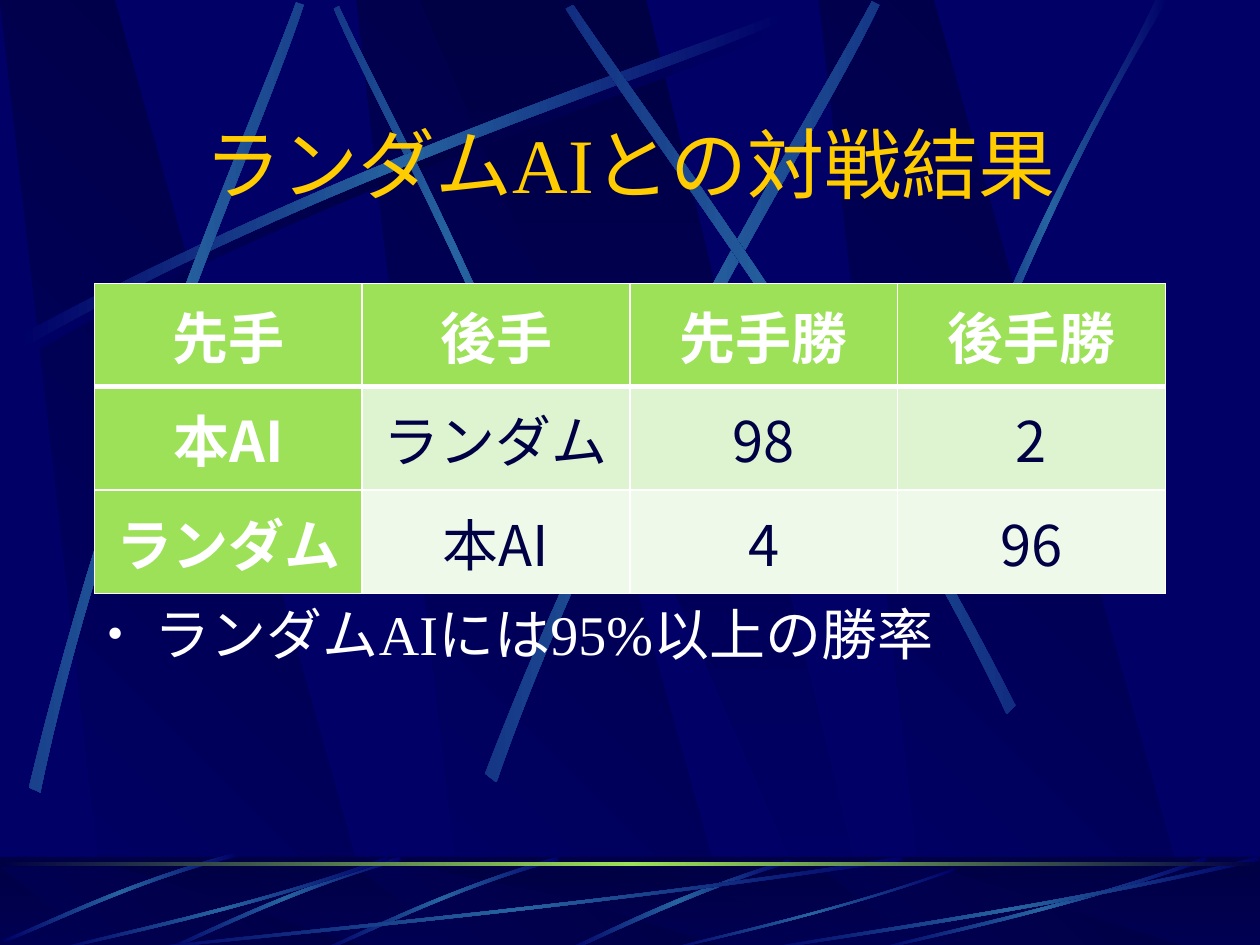
from dataclasses import dataclass
from math import cos, radians, sin

from lxml import etree
from pptx import Presentation
from pptx.dml.color import RGBColor
from pptx.enum.shapes import MSO_SHAPE
from pptx.enum.text import MSO_ANCHOR, PP_ALIGN
from pptx.oxml.ns import qn
from pptx.util import Emu, Pt

EMU_PER_PX = 9144
RECTANGLE = MSO_SHAPE.RECTANGLE
MIDDLE = MSO_ANCHOR.MIDDLE
CENTER = PP_ALIGN.CENTER
LEFT = PP_ALIGN.LEFT

Point = tuple[float, float]


@dataclass(frozen=True)
class Theme:
    navy: str = "000066"
    dark: str = "000044"
    streak: str = "2663A0"
    green: str = "9CE157"
    gold: str = "FFCC00"
    white: str = "FFFFFF"
    bands: tuple[str, ...] = ("DEF4D1", "EFF9EA")
    serif: str = "Times New Roman"
    sans: str = "Noto Sans CJK JP"
    title_size: int = 44
    text_size: int = 32


THEME = Theme()


@dataclass(frozen=True)
class Box:
    left: int
    top: int
    width: int
    height: int

    def emu(self) -> list[Emu]:
        return [px(n) for n in (self.left, self.top, self.width, self.height)]


@dataclass(frozen=True)
class Ribbon:
    outer: tuple[Point, ...]
    inner: tuple[Point, ...]
    rotation: float = 0
    shifts: tuple[int, ...] = (0,)


@dataclass(frozen=True)
class PanelBand:
    top: int
    bottom: int


PANEL_BANDS = (PanelBand(0, 752), PanelBand(688, 755))
PANEL_LEFTS = (283, 0, 650)
FOOTER = Box(0, 680, 1000, 75)

LONG_RIBBON = Ribbon(((14, 267), (278, 125), (518, 51), (620, 10)),
                     ((623, 16), (522, 61), (248, 143), (17, 277)))
UPPER_RIBBONS = (
    Ribbon(((460, 436), (391, 234), (302, 77), (269, 5)),
           ((265, 7), (295, 79), (398, 258), (454, 439)), 45),
    LONG_RIBBON,
    Ribbon(((23, 625), (93, 334), (197, 105), (235, 2)),
           ((241, 4), (207, 109), (86, 368), (32, 629)), 311.7),
    Ribbon(((385, 614), (498, 320), (638, 102), (692, 1)),
           ((698, 4), (649, 108), (486, 355), (394, 621)), 321.6),
    Ribbon(((806, 560), (670, 293), (516, 95), (455, 4)),
           ((449, 7), (507, 101), (685, 325), (799, 567)), 34.7),
    Ribbon(((738, 394), (814, 173), (888, 66), (917, 0)),
           ((927, 0), (836, 145), (769, 322), (744, 397))),
)
FOOTER_RIBBONS = (
    Ribbon(((627, 682), (537, 709), (477, 742), (448, 754)),
           ((453, 755), (490, 738), (571, 700), (628, 685))),
    Ribbon(((442, 680), (355, 705), (287, 740), (256, 753)),
           ((257, 755), (288, 743), (365, 703), (444, 683)), 315, (0, -125)),
    Ribbon(((186, 677), (99, 700), (33, 734), (2, 746)),
           ((3, 748), (34, 737), (110, 698), (188, 680)), 315),
    Ribbon(((717, 683), (449, 723), (206, 744), (103, 755)),
           ((100, 754), (202, 741), (480, 718), (714, 680))),
    Ribbon(((308, 683), (193, 723), (88, 744), (43, 755)),
           ((42, 754), (86, 741), (206, 718), (307, 680)), 0, (0, 650)),
    Ribbon(((758, 691), (658, 726), (567, 745), (528, 755)),
           ((527, 754), (565, 743), (669, 722), (757, 689))),
    Ribbon(((1000, 683), (827, 723), (669, 744), (602, 755)),
           ((600, 754), (666, 741), (846, 718), (998, 680))),
)
RESULTS = (
    ("先手", "後手", "先手勝", "後手勝"),
    ("本AI", "ランダム", "98", "2"),
    ("ランダム", "本AI", "4", "96"),
)


def px(length: float) -> Emu:
    return Emu(round(length * EMU_PER_PX))


def rotate(point: Point, degrees: float) -> Point:
    x, y = point
    angle = radians(degrees)
    return x * cos(angle) - y * sin(angle), x * sin(angle) + y * cos(angle)


def unrotate(points: list[Point], degrees: float) -> list[Point]:
    turned = [rotate(point, -degrees) for point in points]
    xs, ys = zip(*turned)
    center = ((min(xs) + max(xs)) / 2, (min(ys) + max(ys)) / 2)
    target = rotate(center, degrees)
    return [(x + target[0] - center[0], y + target[1] - center[1]) for x, y in turned]


def finish(shape) -> None:
    shape.shadow.inherit = False
    shape.line.fill.background()


def fill_gradient(shape, colors: tuple[str, ...], angle: float) -> None:
    shape.fill.gradient()
    shape.fill.gradient_angle = angle
    stops = shape._element.spPr.find(qn("a:gradFill")).find(qn("a:gsLst"))
    for stop in list(stops):
        stops.remove(stop)
    for index, color in enumerate(colors):
        position = round(100000 * index / (len(colors) - 1))
        stop = etree.SubElement(stops, qn("a:gs"), pos=str(position))
        etree.SubElement(stop, qn("a:srgbClr"), val=color)


def draw_outline(slide, points: list[Point], colors: tuple[str, ...],
                 angle: float, rotation: float = 0):
    start, *rest = [(px(x), px(y)) for x, y in unrotate(points, rotation)]
    builder = slide.shapes.build_freeform(*start)
    builder.add_line_segments(rest)
    shape = builder.convert_to_shape()
    shape.rotation = rotation
    fill_gradient(shape, colors, angle)
    finish(shape)
    return shape


def bend_edges(shape) -> None:
    lines = list(shape._element.spPr.iter(qn("a:lnTo")))
    for group in (lines[:3], lines[4:7]):
        curve = etree.Element(qn("a:cubicBezTo"))
        group[0].addprevious(curve)
        for line in group:
            curve.append(line[0])
            line.getparent().remove(line)


def draw_ribbon(slide, ribbon: Ribbon, middle: str, drop: int = 0) -> None:
    for shift in ribbon.shifts:
        points = [(x + shift, y + drop) for x, y in ribbon.outer + ribbon.inner]
        shape = draw_outline(slide, points, (THEME.navy, middle, THEME.navy),
                             ribbon.rotation, ribbon.rotation)
        bend_edges(shape)


def draw_panels(slide, band: PanelBand) -> None:
    top, bottom = band.top, band.bottom
    for left in PANEL_LEFTS:
        points = [(left + 86, bottom), (left + 302, bottom), (left + 91, top), (left, top)]
        draw_outline(slide, points, (THEME.navy, THEME.dark), 45)
    points = [(333, top), (658, bottom), (694, bottom), (513, top)]
    draw_outline(slide, points, (THEME.dark, THEME.navy), 270)


def draw_rectangle(slide, box: Box, colors: tuple[str, ...], angle: float) -> None:
    shape = slide.shapes.add_shape(RECTANGLE, *box.emu())
    fill_gradient(shape, colors, angle)
    finish(shape)


def draw_veil(slide, box: Box) -> None:
    shape = slide.shapes.add_shape(RECTANGLE, *box.emu())
    shape.fill.solid()
    shape.fill.fore_color.rgb = RGBColor.from_string(THEME.dark)
    color = shape._element.spPr.find(qn("a:solidFill")).find(qn("a:srgbClr"))
    etree.SubElement(color, qn("a:alpha"), val="50000")
    finish(shape)


def style(paragraph, color: str, size: int, name: str, align, bold: bool = False) -> None:
    paragraph.alignment = align
    font = paragraph.font
    font.name, font.size, font.bold = name, Pt(size), bold
    font.color.rgb = RGBColor.from_string(color)


def add_text(slide, box: Box, text: str):
    frame = slide.shapes.add_textbox(*box.emu()).text_frame
    frame.word_wrap = True
    frame.text = text
    return frame


def add_bullet(paragraph, indent: int) -> None:
    properties = paragraph._p.get_or_add_pPr()
    properties.set("marL", str(px(indent)))
    properties.set("indent", str(px(-indent)))
    etree.SubElement(properties, qn("a:buSzPct"), val="85000")
    etree.SubElement(properties, qn("a:buFont"), typeface=THEME.serif)
    etree.SubElement(properties, qn("a:buChar"), char="•")


def add_borders(cell, row: int) -> None:
    widths = {"L": 1, "R": 1, "T": 1, "B": 3 if row == 0 else 1}
    if row == 1:
        del widths["T"]
    properties = cell._tc.get_or_add_tcPr()
    for side, width in widths.items():
        line = etree.SubElement(properties, qn(f"a:ln{side}"), w=str(Pt(width)))
        fill = etree.SubElement(line, qn("a:solidFill"))
        etree.SubElement(fill, qn("a:srgbClr"), val=THEME.white)


def draw_results(slide, box: Box) -> None:
    table = slide.shapes.add_table(len(RESULTS), len(RESULTS[0]), *box.emu()).table
    table.first_row = table.horz_banding = False
    for row, texts in enumerate(RESULTS):
        for column, text in enumerate(texts):
            cell = table.cell(row, column)
            heading = row == 0 or column == 0
            add_borders(cell, row)
            cell.fill.solid()
            cell.fill.fore_color.rgb = RGBColor.from_string(
                THEME.green if heading else THEME.bands[row - 1])
            cell.vertical_anchor = MIDDLE
            cell.margin_left = cell.margin_right = px(7)
            cell.margin_top = cell.margin_bottom = 0
            cell.text = text
            style(cell.text_frame.paragraphs[0], THEME.white if heading else THEME.dark,
                  THEME.text_size, THEME.sans, CENTER, heading)


def draw_backdrop(slide) -> None:
    slide.background.fill.solid()
    slide.background.fill.fore_color.rgb = RGBColor.from_string(THEME.navy)
    upper, lower = PANEL_BANDS
    draw_panels(slide, upper)
    draw_ribbon(slide, LONG_RIBBON, THEME.dark, drop=8)
    for ribbon in UPPER_RIBBONS:
        draw_ribbon(slide, ribbon, THEME.streak)
    draw_rectangle(slide, FOOTER, (THEME.dark, THEME.navy), 270)
    draw_panels(slide, lower)
    draw_veil(slide, FOOTER)
    for ribbon in FOOTER_RIBBONS:
        draw_ribbon(slide, ribbon, THEME.streak)
    draw_rectangle(slide, Box(0, 684, 1000, 3), (THEME.dark, THEME.green, THEME.dark), 0)


def main() -> None:
    presentation = Presentation()
    presentation.slide_width, presentation.slide_height = px(1000), px(750)
    slide = presentation.slides.add_slide(presentation.slide_layouts[6])
    draw_backdrop(slide)
    title = add_text(slide, Box(75, 87, 850, 84), "ランダムAIとの対戦結果")
    title.vertical_anchor = MIDDLE
    style(title.paragraphs[0], THEME.gold, THEME.title_size, THEME.serif, CENTER)
    body = add_text(slide, Box(75, 471, 850, 196), "ランダムAIには95%以上の勝率")
    add_bullet(body.paragraphs[0], 38)
    style(body.paragraphs[0], THEME.white, THEME.text_size, THEME.serif, LEFT)
    draw_results(slide, Box(75, 225, 850, 246))
    presentation.save("out.pptx")


if __name__ == "__main__":
    main()
